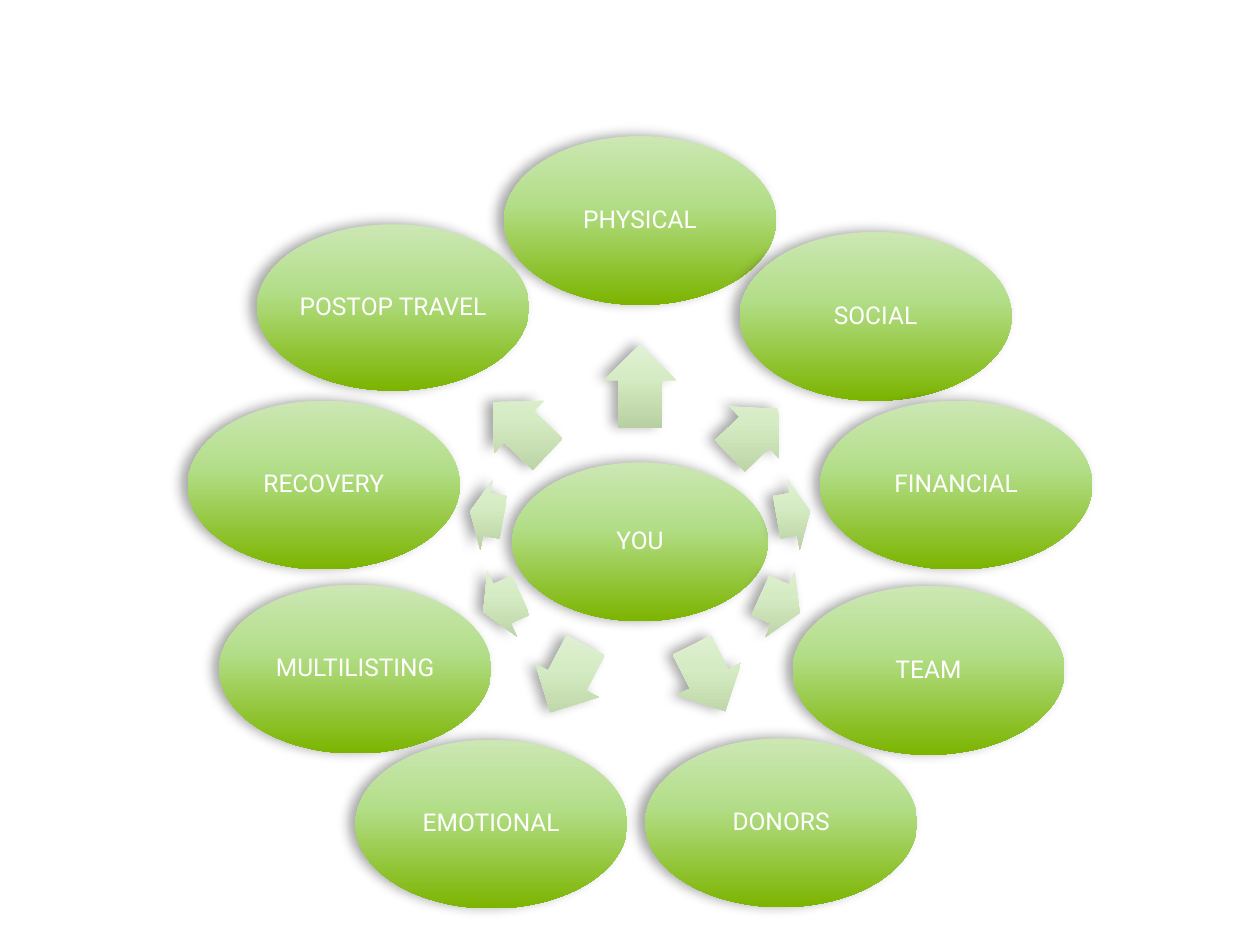
from copy import deepcopy
from dataclasses import dataclass
from math import atan2, cos, degrees, hypot, sin

from lxml.etree import SubElement
from pptx import Presentation
from pptx.dml.color import RGBColor
from pptx.enum.shapes import MSO_SHAPE as Shape
from pptx.enum.text import MSO_ANCHOR as Anchor, PP_ALIGN as Align
from pptx.oxml.ns import qn
from pptx.util import Inches, Pt


@dataclass(frozen=True)
class Theme:
    font: str = "Roboto"
    label_size: int = 14
    label_color: str = "FFFFFF"
    shadow_color: str = "000000"
    oval_stops: tuple = ((0, "CCE7B4"), (0.4, "B3DE89"), (1, "7CB400"))
    arrow_stops: tuple = ((0, "E2F1D6"), (0.4, "D5EBC3"), (1, "B8D0A1"))


HUB = (5.08, 4.3)
HUB_SIZE = (2.03, 1.26)
TOPIC_SIZE = (2.16, 1.34)
ARROW_HEIGHT = 0.57
ARROW_SHARE_OF_GAP = 0.53
ARROW_SHARE_OF_SPOKE = 0.485

TOPICS = [
    ("PHYSICAL", 5.08, 1.75, TOPIC_SIZE),
    ("SOCIAL", 6.95, 2.51, TOPIC_SIZE),
    ("FINANCIAL", 7.59, 3.85, TOPIC_SIZE),
    ("TEAM", 7.37, 5.32, TOPIC_SIZE),
    ("DONORS", 6.2, 6.53, TOPIC_SIZE),
    ("EMOTIONAL", 3.9, 6.54, TOPIC_SIZE),
    ("MULTILISTING", 2.82, 5.31, TOPIC_SIZE),
    ("RECOVERY", 2.57, 3.85, TOPIC_SIZE),
    ("POSTOP TRAVEL", 3.12, 2.44, (2.16, 1.32)),
]


def oval_reach(size, angle):
    width, height = size
    return 0.5 / hypot(cos(angle) / width, sin(angle) / height)


class RadialSlide:
    def __init__(self, slide, theme):
        self.slide = slide
        self.theme = theme

    def centred(self, kind, center, size, stops):
        (x, y), (width, height) = center, size
        shape = self.slide.shapes.add_shape(
            kind, Inches(x - width / 2), Inches(y - height / 2), Inches(width), Inches(height)
        )
        shape.line.fill.background()
        self.shade(shape, stops)
        self.cast_shadow(shape)
        return shape

    def shade(self, shape, stops):
        shape.fill.gradient()
        shape.fill.gradient_angle = 270
        gradient = shape._element.spPr.find(qn("a:gradFill"))
        gradient.set("rotWithShape", "0")
        stop_list = gradient.find(qn("a:gsLst"))
        stop_list.append(deepcopy(stop_list[-1]))
        for stop, (position, color) in zip(shape.fill.gradient_stops, stops):
            stop.position = position
            stop.color.rgb = RGBColor.from_string(color)

    def cast_shadow(self, shape):
        shape.shadow.inherit = False
        effects = shape._element.spPr.find(qn("a:effectLst"))
        shadow = SubElement(
            effects, qn("a:outerShdw"), blurRad=str(Pt(7)), dist=str(Pt(4)),
            dir=str(190 * 60000), rotWithShape="0",
        )
        color = SubElement(shadow, qn("a:srgbClr"), val=self.theme.shadow_color)
        SubElement(color, qn("a:alpha"), val="35000")

    def oval(self, label, center, size):
        oval = self.centred(Shape.OVAL, center, size, self.theme.oval_stops)
        frame = oval.text_frame
        frame.word_wrap = True
        frame.vertical_anchor = Anchor.MIDDLE
        frame.margin_left = frame.margin_right = Inches(0.02)
        frame.margin_top = frame.margin_bottom = Inches(0.02)
        frame.text = label
        paragraph = frame.paragraphs[0]
        paragraph.alignment = Align.CENTER
        paragraph.line_spacing = 0.9
        paragraph.font.name = self.theme.font
        paragraph.font.size = Pt(self.theme.label_size)
        paragraph.font.color.rgb = RGBColor.from_string(self.theme.label_color)

    def arrow(self, topic_center, topic_size):
        dx, dy = topic_center[0] - HUB[0], topic_center[1] - HUB[1]
        angle = atan2(dy, dx)
        gap = hypot(dx, dy) - oval_reach(HUB_SIZE, angle) - oval_reach(topic_size, angle)
        center = (HUB[0] + dx * ARROW_SHARE_OF_SPOKE, HUB[1] + dy * ARROW_SHARE_OF_SPOKE)
        size = (gap * ARROW_SHARE_OF_GAP, ARROW_HEIGHT)
        arrow = self.centred(Shape.RIGHT_ARROW, center, size, self.theme.arrow_stops)
        arrow.adjustments[0] = 0.6
        arrow.adjustments[1] = 0.5
        arrow.rotation = degrees(angle) % 360


def main():
    deck = Presentation()
    deck.slide_width, deck.slide_height = Inches(10), Inches(7.5)
    radial = RadialSlide(deck.slides.add_slide(deck.slide_layouts[6]), Theme())
    radial.oval("YOU", HUB, HUB_SIZE)
    for label, x, y, size in TOPICS:
        radial.arrow((x, y), size)
        radial.oval(label, (x, y), size)
    deck.save("out.pptx")


if __name__ == "__main__":
    main()
